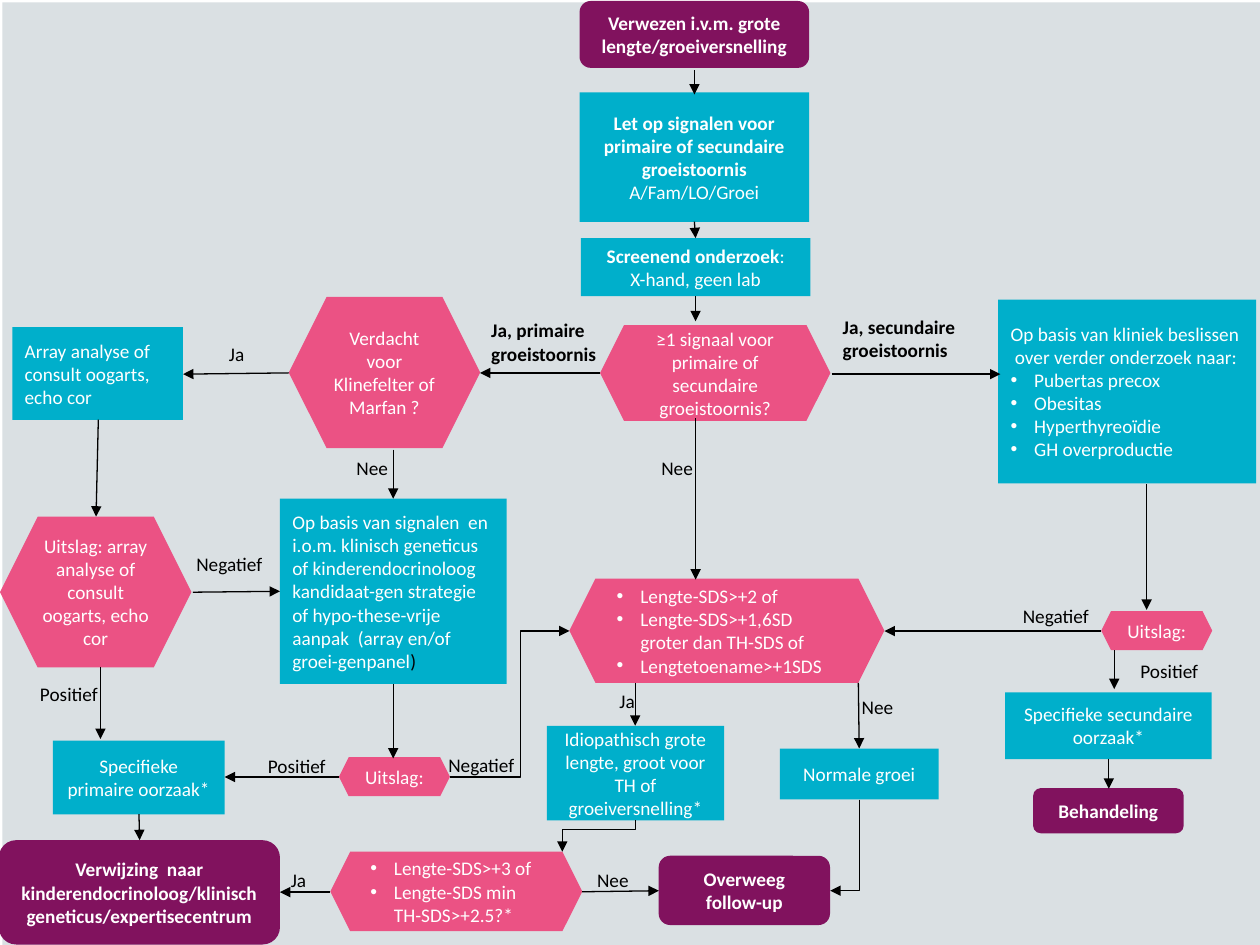
from dataclasses import dataclass
from typing import NamedTuple

from lxml import etree
from pptx import Presentation
from pptx import util as u
from pptx.dml.color import RGBColor
from pptx.enum import shapes, text
from pptx.oxml import ns

COLORS = {
    "background": "DAE0E3",
    "question": "EB5284",
    "action": "00AFCB",
    "endpoint": "81125E",
    "light": "FFFFFF",
    "dark": "000000",
}
SHAPE_OF = {
    "question": shapes.MSO_SHAPE.HEXAGON,
    "action": shapes.MSO_SHAPE.RECTANGLE,
    "endpoint": shapes.MSO_SHAPE.ROUNDED_RECTANGLE,
}
LEFT, CENTER = text.PP_ALIGN.LEFT, text.PP_ALIGN.CENTER
FONT, SIZE, INDENT = "Calibri", 11, 13.5


class Box(NamedTuple):
    left: float
    top: float
    width: float
    height: float


class Run(NamedTuple):
    words: str
    bold: bool = False
    color: str = "light"


@dataclass
class Line:
    runs: list[Run]
    bullet: bool = False


@dataclass
class Step:
    kind: str
    box: Box
    lines: list[Line]
    align: text.PP_ALIGN = CENTER


@dataclass
class Label:
    box: Box
    lines: list[Line]


@dataclass
class Elbow:
    start: tuple[float, float]
    end: tuple[float, float]
    preset: str = "bentConnector3"
    turn: int = 0
    bend: int | None = None


def plain(words: str) -> Line:
    return Line([Run(words)])


def bold(words: str) -> Line:
    return Line([Run(words, True)])


def bullets(*items: str) -> list[Line]:
    return [Line([Run(item)], True) for item in items]


def label(left: float, top: float, words: str, width: float = 52) -> Label:
    return Label(Box(left, top, width, 20.9), [Line([Run(words, False, "dark")])])


def heading(box: Box, *rows: str) -> Label:
    return Label(box, [Line([Run(row, True, "dark")]) for row in rows])


STEPS = [
    Step("question", Box(342.9, 185.8, 131.6, 54.7),
         [plain("≥1 signaal voor primaire of secundaire groeistoornis?")]),
    Step("question", Box(165, 169.7, 109.4, 86.4), [plain("Verdacht voor Klinefelter of Marfan ?")]),
    Step("action", Box(160, 285, 129.6, 105.8),
         [Line([Run("Op basis van signalen  en i.o.m. klinisch geneticus of kinderendocrinoloog "
                    "kandidaat-gen strategie of hypo-these-vrije aanpak  (array en/of groei-genpanel"),
                Run(")", False, "dark")])], LEFT),
    Step("action", Box(570.4, 171.2, 147.4, 105),
         [plain("Op basis van kliniek beslissen  over verder onderzoek naar:"),
          *bullets("Pubertas precox", "Obesitas", "Hyperthyreoïdie", "GH overproductie")], LEFT),
    Step("question", Box(325.4, 330.6, 180, 59.6),
         bullets("Lengte-SDS>+2 of", "Lengte-SDS>+1,6SD groter dan TH-SDS of",
                 "Lengtetoename>+1SDS"), LEFT),
    Step("question", Box(188.8, 486.7, 144, 45.4),
         bullets("Lengte-SDS>+3 of", "Lengte-SDS min TH-SDS>+2.5?*"), LEFT),
    Step("action", Box(7, 187, 97.6, 53),
         [plain("Array analyse of consult oogarts, echo cor")], LEFT),
    Step("action", Box(30.2, 423.2, 98.2, 42.2), [plain("Specifieke primaire oorzaak*")]),
    Step("action", Box(574.4, 395.6, 118, 38.2), [plain("Specifieke secundaire oorzaak*")]),
    Step("endpoint", Box(-0.7, 480.1, 160.7, 59.6),
         [bold("Verwijzing  naar kinderendocrinoloog/klinisch geneticus/expertisecentrum")]),
    Step("action", Box(312.5, 414.8, 101.3, 54),
         [plain("Idiopathisch grote lengte, groot voor TH of groeiversnelling*")]),
    Step("action", Box(445.7, 427.8, 90.7, 29), [plain("Normale groei")]),
    Step("endpoint", Box(376.4, 489, 97.9, 39.6), [bold("Overweeg"), bold("follow-up")]),
    Step("action", Box(331.2, 52.8, 131.2, 74),
         [bold("Let op signalen voor primaire of secundaire groeistoornis"), plain("A/Fam/LO/Groei")]),
    Step("endpoint", Box(331.2, 0.6, 131.2, 38.2),
         [bold("Verwezen i.v.m. grote lengte/groeiversnelling")]),
    Step("action", Box(332, 136.1, 131.2, 33.1),
         [Line([Run("Screenend onderzoek", True), Run(":")]), plain("X-hand, geen lab")]),
    Step("question", Box(0, 295.2, 109.4, 86.2),
         [plain("Uitslag: array analyse of consult oogarts, echo cor")]),
    Step("question", Box(629.3, 349.2, 63.4, 22.3), [plain("Uitslag:")]),
    Step("question", Box(193.7, 432.7, 63.4, 22.3), [plain("Uitslag:")]),
    Step("endpoint", Box(590.4, 450.4, 86, 25.8), [bold("Behandeling")]),
]

LABELS = [
    heading(Box(474.5, 176.4, 88.6, 33.8), "Ja, secundaire", "groeistoornis"),
    heading(Box(273.6, 178.6, 80.6, 33.8), "Ja, primaire groeistoornis"),
    label(196.6, 257, "Nee"),
    label(370.8, 257, "Nee"),
    label(485.3, 393.8, "Nee"),
    label(334.1, 492.5, "Nee"),
    label(346.9, 390.2, "Ja"),
    label(159.1, 492.5, "Ja"),
    label(123.8, 192.2, "Ja"),
    label(146, 427.7, "Positief"),
    label(644.6, 373, "Positief"),
    label(15.8, 386.6, "Positief"),
    label(249.1, 427, "Negatief"),
    label(577.4, 342, "Negatief"),
    label(105.1, 311.8, "Negatief"),
]

ARROWS = [
    ((396.8, 40.3), (396.8, 54)),
    ((396.8, 126.7), (397.5, 136.1)),
    ((397.5, 169.2), (397.5, 183.6)),
    ((397.5, 239), (397.5, 331.2)),
    ((342.7, 213.1), (274.3, 213.1)),
    ((164.9, 213.1), (104.6, 213.8)),
    ((475.2, 213.8), (571.7, 213.8)),
    ((224.7, 257), (224.7, 285)),
    ((224.7, 391), (224.7, 433.4)),
    ((56.2, 239.8), (54.9, 295.2)),
    ((110.2, 338.4), (160, 337.9)),
    ((57.4, 381), (57.4, 422.3)),
    ((193.7, 444), (128.4, 444)),
    ((79.4, 465.2), (79.8, 480.1)),
    ((629.3, 360.6), (505.4, 360.6)),
    ((655.2, 276.5), (655.2, 348.5)),
    ((636.7, 371.5), (636.7, 393.8)),
    ((633.6, 433.5), (633.6, 450.7)),
    ((363, 390.2), (363, 414.7)),
    ((490.5, 390.2), (491, 427.7)),
    ((188.6, 509.8), (160, 509.8)),
    ((332.6, 509.6), (376.5, 509)),
]

ELBOWS = [
    Elbow((491, 457), (474.4, 509), "bentConnector2", 90),
    Elbow((363, 468.8), (321.3, 486.7), turn=90, bend=28500),
    Elbow((257, 444), (325.4, 360.6), bend=59400),
]


def rgb(name: str) -> RGBColor:
    return RGBColor.from_string(COLORS[name])


def points(values) -> list[u.Length]:
    return [u.Pt(value) for value in values]


def write(frame, lines: list[Line], align: text.PP_ALIGN) -> None:
    frame.word_wrap = True
    for index, line in enumerate(lines):
        paragraph = frame.paragraphs[0] if index == 0 else frame.add_paragraph()
        paragraph.alignment = align
        if line.bullet:
            properties = paragraph._p.get_or_add_pPr()
            properties.set("marL", str(u.Pt(INDENT)))
            properties.set("indent", str(-u.Pt(INDENT)))
            etree.SubElement(properties, ns.qn("a:buFont"), typeface="Arial")
            etree.SubElement(properties, ns.qn("a:buChar"), char="•")
        for part in line.runs:
            run = paragraph.add_run()
            run.text = part.words
            run.font.name, run.font.size = FONT, u.Pt(SIZE)
            run.font.bold, run.font.color.rgb = part.bold, rgb(part.color)


def draw_block(slide, preset: shapes.MSO_SHAPE, box: Box, color: str):
    block = slide.shapes.add_shape(preset, *points(box))
    block.shadow.inherit = False
    block.fill.solid()
    block.fill.fore_color.rgb = rgb(color)
    block.line.fill.background()
    return block


def draw_step(slide, step: Step) -> None:
    frame = draw_block(slide, SHAPE_OF[step.kind], step.box, step.kind).text_frame
    frame.vertical_anchor = text.MSO_ANCHOR.MIDDLE
    write(frame, step.lines, step.align)


def draw_label(slide, item: Label) -> None:
    frame = slide.shapes.add_textbox(*points(item.box)).text_frame
    frame.margin_right = 0
    write(frame, item.lines, LEFT)


def draw_arrow(slide, start, end, kind=shapes.MSO_CONNECTOR.STRAIGHT):
    arrow = slide.shapes.add_connector(kind, *points((*start, *end)))
    arrow.line.width = u.Pt(0.75)
    arrow.line.color.rgb = rgb("dark")
    etree.SubElement(arrow.line._get_or_add_ln(), ns.qn("a:tailEnd"), type="triangle")
    etree.SubElement(arrow._element.spPr, ns.qn("a:effectLst"))
    return arrow


def draw_elbow(slide, elbow: Elbow) -> None:
    (x1, y1), (x2, y2) = elbow.start, elbow.end
    if elbow.turn:
        mid_x, mid_y = (x1 + x2) / 2, (y1 + y2) / 2
        half_w, half_h = (y2 - y1) / 2, (x1 - x2) / 2
        x1, x2, y1, y2 = mid_x - half_w, mid_x + half_w, mid_y - half_h, mid_y + half_h
    arrow = draw_arrow(slide, (x1, y1), (x2, y2), shapes.MSO_CONNECTOR.ELBOW)
    properties = arrow._element.spPr
    if elbow.turn:
        properties.find(ns.qn("a:xfrm")).set("rot", str(elbow.turn * 60000))
    geometry = properties.find(ns.qn("a:prstGeom"))
    geometry.set("prst", elbow.preset)
    if elbow.bend is not None:
        guides = geometry.find(ns.qn("a:avLst"))
        etree.SubElement(guides, ns.qn("a:gd"), name="adj1", fmla=f"val {elbow.bend}")


def main() -> None:
    deck = Presentation()
    deck.slide_width, deck.slide_height = points((720, 540))
    slide = deck.slides.add_slide(deck.slide_layouts[6])
    draw_block(slide, shapes.MSO_SHAPE.RECTANGLE, Box(1.4, 1.4, 720, 540.7), "background")
    for step in STEPS:
        draw_step(slide, step)
    for start, end in ARROWS:
        draw_arrow(slide, start, end)
    for elbow in ELBOWS:
        draw_elbow(slide, elbow)
    for item in LABELS:
        draw_label(slide, item)
    deck.save("out.pptx")


if __name__ == "__main__":
    main()
